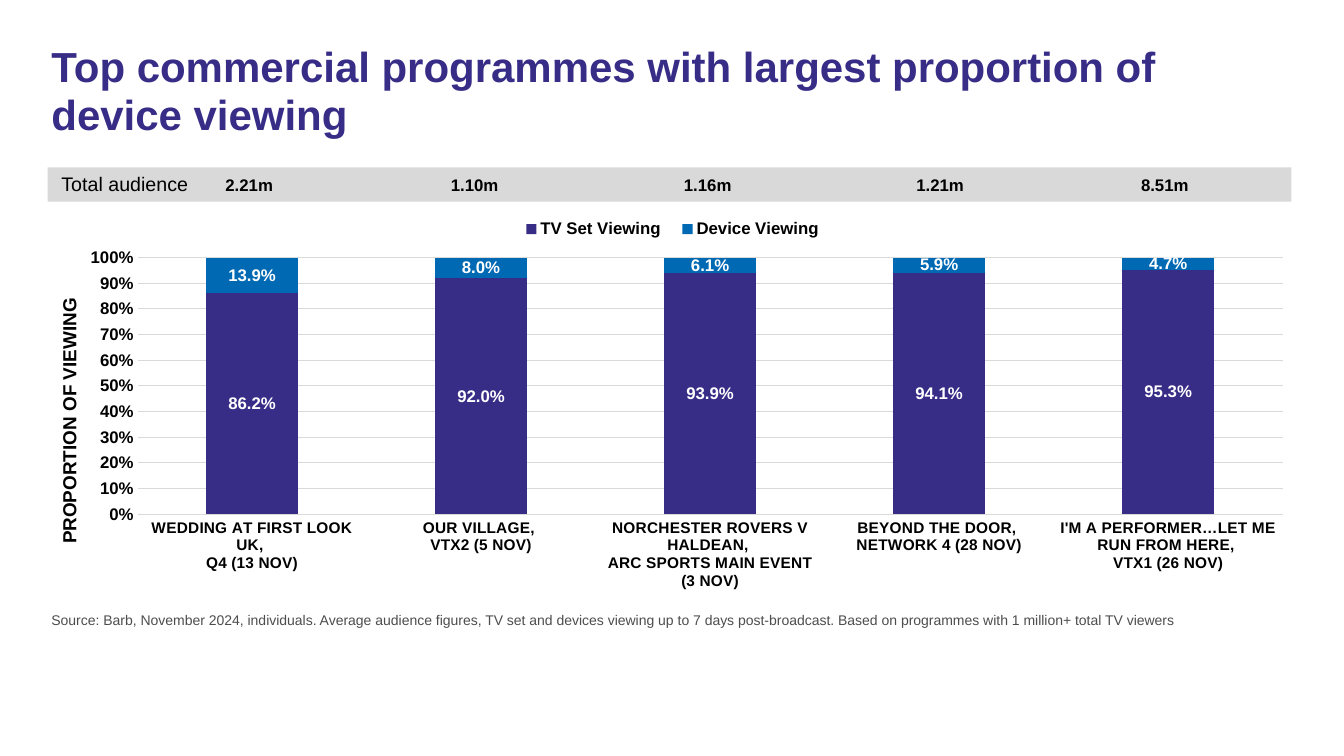
import pptx
import pptx.chart.data
import pptx.dml.color
import pptx.enum.chart
import pptx.enum.shapes
import pptx.enum.text
import pptx.oxml.xmlchemy
import pptx.util

Pt = pptx.util.Pt
Align = pptx.enum.text.PP_ALIGN
Anchor = pptx.enum.text.MSO_ANCHOR
Kind = pptx.enum.chart
Node = pptx.oxml.xmlchemy.OxmlElement

HUES = {"violet": "372D87", "blue": "0069B4", "band": "D9D9D9",
        "ink": "000000", "grey": "4D4D4D", "white": "FFFFFF"}

TOTALS = [("2.21m", 178), ("1.10m", 339), ("1.16m", 505.5),
          ("1.21m", 671.5), ("8.51m", 832)]
SHOWS = ["WEDDING AT FIRST LOOK UK, \nQ4 (13 NOV)",
         "OUR VILLAGE, \nVTX2 (5 NOV)",
         "NORCHESTER ROVERS V HALDEAN, \nARC SPORTS MAIN EVENT (3 NOV)",
         "BEYOND THE DOOR, \nNETWORK 4 (28 NOV)",
         "I'M A PERFORMER…LET ME RUN FROM HERE, \nVTX1 (26 NOV)"]
PARTS = [("TV Set Viewing", [0.862, 0.92, 0.939, 0.941, 0.953], "violet"),
         ("Device Viewing", [0.139, 0.08, 0.061, 0.059, 0.047], "blue")]


class Board:
    face = "Arial"

    def __init__(self, deck):
        self.slide = deck.slides.add_slide(deck.slide_layouts[1])

    def hue(self, name):
        return pptx.dml.color.RGBColor.from_string(HUES[name])

    def paint(self, fill, name):
        fill.solid()
        fill.fore_color.rgb = self.hue(name)

    def style(self, font, size, name="ink", bold=False):
        font.name = self.face
        font.size = Pt(size)
        font.bold = bold
        font.color.rgb = self.hue(name)

    def holder(self, index, text, box, size, name, bold=False, space=1):
        shape = self.slide.placeholders[index]
        shape.left, shape.top, shape.width, shape.height = map(Pt, box)
        frame = shape.text_frame
        frame.text = text
        frame.auto_size = pptx.enum.text.MSO_AUTO_SIZE.NONE
        frame.vertical_anchor = Anchor.TOP
        para = frame.paragraphs[0]
        para.alignment = Align.LEFT
        para.line_spacing = space
        para.space_before = Pt(0)
        props = para._p.get_or_add_pPr()
        props.set("marL", "0")
        props.set("indent", "0")
        props.append(Node("a:buNone"))
        self.style(para.font, size, name, bold)

    def label(self, text, box, size, align, bold=False):
        frame = self.slide.shapes.add_textbox(*map(Pt, box)).text_frame
        frame.word_wrap = True
        para = frame.paragraphs[0]
        para.text = text
        para.alignment = align
        self.style(para.font, size, bold=bold)

    def band(self, box, name):
        shape = self.slide.shapes.add_shape(
            pptx.enum.shapes.MSO_SHAPE.RECTANGLE, *map(Pt, box))
        shape.shadow.inherit = False
        self.paint(shape.fill, name)
        shape.line.fill.background()

    def place(self, host, index, inner=False, **spots):
        for old in host.xpath("./c:layout"):
            host.remove(old)
        layout, manual = Node("c:layout"), Node("c:manualLayout")
        layout.append(manual)
        rules = {"layoutTarget": "inner"} if inner else {}
        rules.update(xMode="edge", yMode="edge", **spots)
        for tag, value in rules.items():
            item = Node("c:" + tag)
            item.set("val", str(value))
            manual.append(item)
        host.insert(index, layout)

    def chart(self, box):
        data = pptx.chart.data.CategoryChartData(number_format="0.0%")
        data.categories = SHOWS
        for name, values, _ in PARTS:
            data.add_series(name, values)
        chart = self.slide.shapes.add_chart(
            Kind.XL_CHART_TYPE.COLUMN_STACKED_100, *map(Pt, box), data).chart
        self.style(chart.font, 10)
        chart.has_title = False
        plot = chart.plots[0]
        plot.gap_width, plot.overlap = 150, 100
        plot.vary_by_categories = False
        for series, (_, _, name) in zip(plot.series, PARTS):
            self.paint(series.format.fill, name)
            marks = series.data_labels
            marks.show_value = True
            marks.number_format = "0.0%"
            marks.number_format_is_linked = False
            marks.position = Kind.XL_LABEL_POSITION.CENTER
            self.style(marks.font, 12, "white", True)
        self.axes(chart)
        chart.has_legend = True
        legend = chart.legend
        legend.position = Kind.XL_LEGEND_POSITION.BOTTOM
        legend.include_in_layout = False
        self.style(legend.font, 12, bold=True)
        self.place(legend._element, 1, x=0.37, y=0.16, w=0.26, h=0.06)
        area = chart._chartSpace.chart.plotArea
        self.place(area, 0, True, x=0.072, y=0.249, w=0.916, h=0.531)

    def axes(self, chart):
        shows, share = chart.category_axis, chart.value_axis
        for axis, size in ((shows, 11), (share, 12)):
            axis.major_tick_mark = Kind.XL_TICK_MARK.NONE
            axis.minor_tick_mark = Kind.XL_TICK_MARK.NONE
            self.style(axis.tick_labels.font, size, bold=True)
        share.minimum_scale, share.maximum_scale = 0, 1
        share.major_unit = 0.1
        share.tick_labels.number_format = "0%"
        share.tick_labels.number_format_is_linked = False
        share.format.line.fill.background()
        share.has_major_gridlines = True
        for line in (shows.format.line, share.major_gridlines.format.line):
            self.paint(line.fill, "band")
            line.width = Pt(0.75)
        title = share.axis_title
        frame = title.text_frame
        frame.text = "PROPORTION OF VIEWING"
        self.style(frame.paragraphs[0].font, 13.5, bold=True)
        turn = frame._txBody.bodyPr
        turn.set("rot", "-5400000")
        turn.set("vert", "horz")
        self.place(title._element, 1, x=0.005, y=0.326)


def main():
    deck = pptx.Presentation()
    deck.slide_width, deck.slide_height = Pt(960), Pt(540)
    board = Board(deck)
    board.band((34, 119.5, 888.5, 24.5), "band")
    board.chart((34, 98, 893, 345.5))
    board.holder(0, "Top commercial programmes with largest proportion of "
                 "device viewing", (29.5, 28, 893, 80.5), 30, "violet", True, 0.95)
    board.holder(1, "Source: Barb, November 2024, individuals. Average audience "
                 "figures, TV set and devices viewing up to 7 days post-broadcast. "
                 "Based on programmes with 1 million+ total TV viewers",
                 (29.5, 433.5, 893, 24), 10, "grey")
    board.label("Total audience", (11.5, 119.5, 130, 24.5), 14, Align.RIGHT)
    for text, mid in TOTALS:
        board.label(text, (mid - 34, 121.5, 68, 22), 12, Align.CENTER, True)
    deck.save("out.pptx")


if __name__ == "__main__":
    main()
